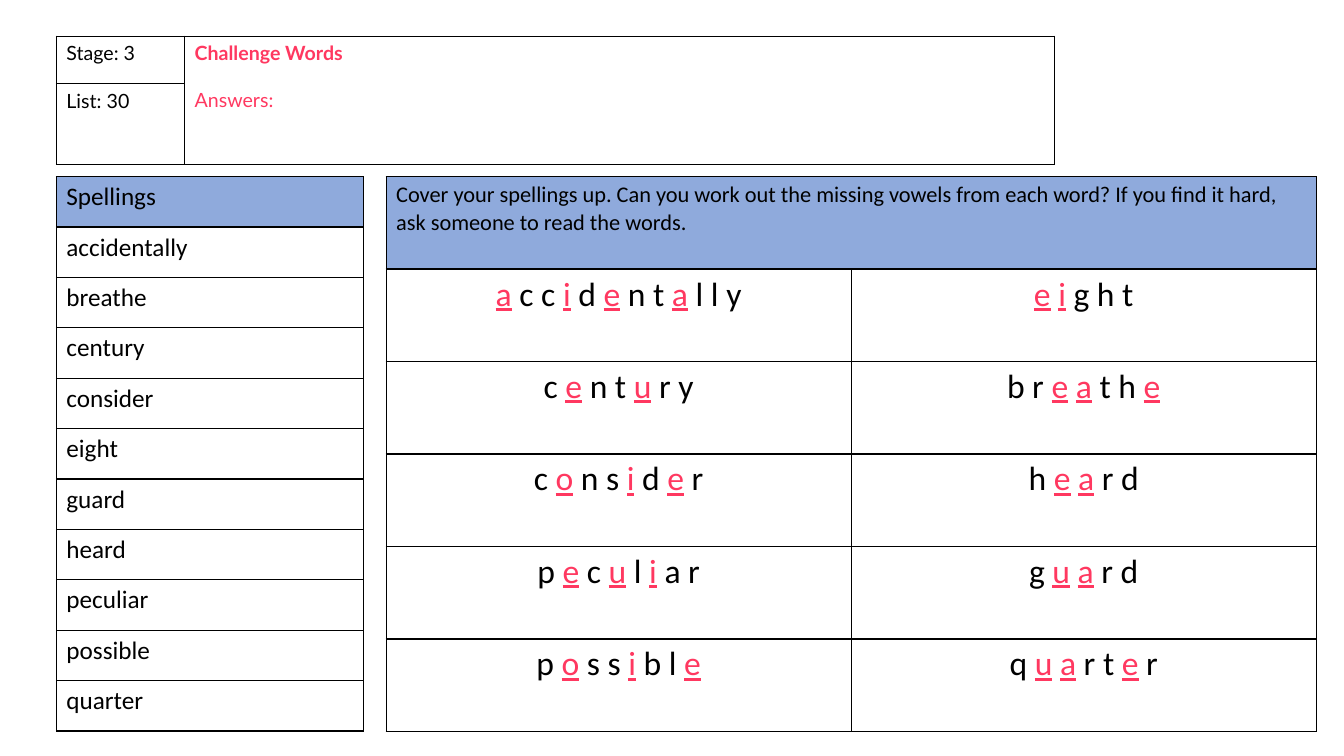
from itertools import groupby

from lxml import etree
from pptx import Presentation
from pptx.dml.color import RGBColor
from pptx.enum.text import PP_ALIGN
from pptx.oxml.ns import qn
from pptx.util import Cm, Pt

BLACK = RGBColor(0x00, 0x00, 0x00)
PINK = RGBColor(0xFF, 0x38, 0x60)
BLUE = RGBColor(0x8F, 0xAA, 0xDC)
CENTER = PP_ALIGN.CENTER


def add_grid(left, top, widths, row_height, row_count):
    """Add a plain table with black 1 pt borders; lengths in cm."""
    frame = slide.shapes.add_table(
        row_count, len(widths), Cm(left), Cm(top),
        Cm(sum(widths)), Cm(row_height * row_count))
    table = frame.table
    table.first_row = False
    table.horz_banding = False
    for column, width in zip(table.columns, widths):
        column.width = Cm(width)
    for row in table.rows:
        row.height = Cm(row_height)
    for cell in table.iter_cells():
        properties = cell._tc.get_or_add_tcPr()
        for side in ("a:lnL", "a:lnR", "a:lnT", "a:lnB"):
            line = etree.SubElement(properties, qn(side), w=str(Pt(1)))
            fill = etree.SubElement(line, qn("a:solidFill"))
            etree.SubElement(fill, qn("a:srgbClr"), val=str(BLACK))
        cell.fill.background()
    return table


def write(para, text, size, font="Calibri", color=BLACK):
    para.font.size = Pt(size)
    para.font.name = font
    para.font.color.rgb = color
    para.add_run().text = text


deck = Presentation()
deck.slide_width = Cm(33.87)
deck.slide_height = Cm(19.05)
slide = deck.slides.add_slide(deck.slide_layouts[6])

# Spelling list
spellings = ["Spellings", "accidentally", "breathe", "century", "consider", "eight",
             "guard", "heard", "peculiar", "possible", "quarter"]
spelling_table = add_grid(1.42, 4.45, [7.75], 1.27, len(spellings))
for row, spelling in enumerate(spellings):
    write(spelling_table.cell(row, 0).text_frame.paragraphs[0], spelling, 18)

# Stage, list and title
title_table = add_grid(1.42, 0.91, [3.23, 21.92], 1.2, 2)
for row, label in enumerate(["Stage: 3", "List: 30"]):
    write(title_table.cell(row, 0).text_frame.paragraphs[0], label, 14, "Lato")
title_cell = title_table.cell(0, 1)
title_cell.merge(title_table.cell(1, 1))
title = title_cell.text_frame.paragraphs[0]
write(title, "Challenge Words", 14, "Lato", PINK)
title.font.bold = True
answers = title_cell.text_frame.add_paragraph()
write(answers, "Answers:", 14, "Lato", PINK)
answers.space_before = Pt(16.8)

# Missing vowels: capitals mark the letters to fill in
puzzles = [("AccIdEntAlly", "EIght"), ("cEntUry", "brEAthE"), ("cOnsIdEr", "hEArd"),
           ("pEcUlIar", "gUArd"), ("pOssIblE", "qUArtEr")]
puzzle_table = add_grid(9.73, 4.45, [11.72, 11.72], 2.33, len(puzzles) + 1)
task_cell = puzzle_table.cell(0, 0)
task_cell.merge(puzzle_table.cell(0, 1))
write(task_cell.text_frame.paragraphs[0],
      "Cover your spellings up. Can you work out the missing vowels from each word? "
      "If you find it hard, ask someone to read the words.", 16)
for row, pair in enumerate(puzzles, start=1):
    for column, word in enumerate(pair):
        para = puzzle_table.cell(row, column).text_frame.paragraphs[0]
        para.alignment = CENTER
        para.font.size = Pt(24)
        para.font.name = "Calibri"
        for is_answer, letters in groupby(" ".join(word), str.isupper):
            span = para.add_run()
            span.text = "".join(letters).lower()
            span.font.underline = is_answer
            span.font.color.rgb = PINK if is_answer else BLACK

# Blue header cells
for cell in (spelling_table.cell(0, 0), task_cell):
    cell.fill.solid()
    cell.fill.fore_color.rgb = BLUE

deck.save("out.pptx")
